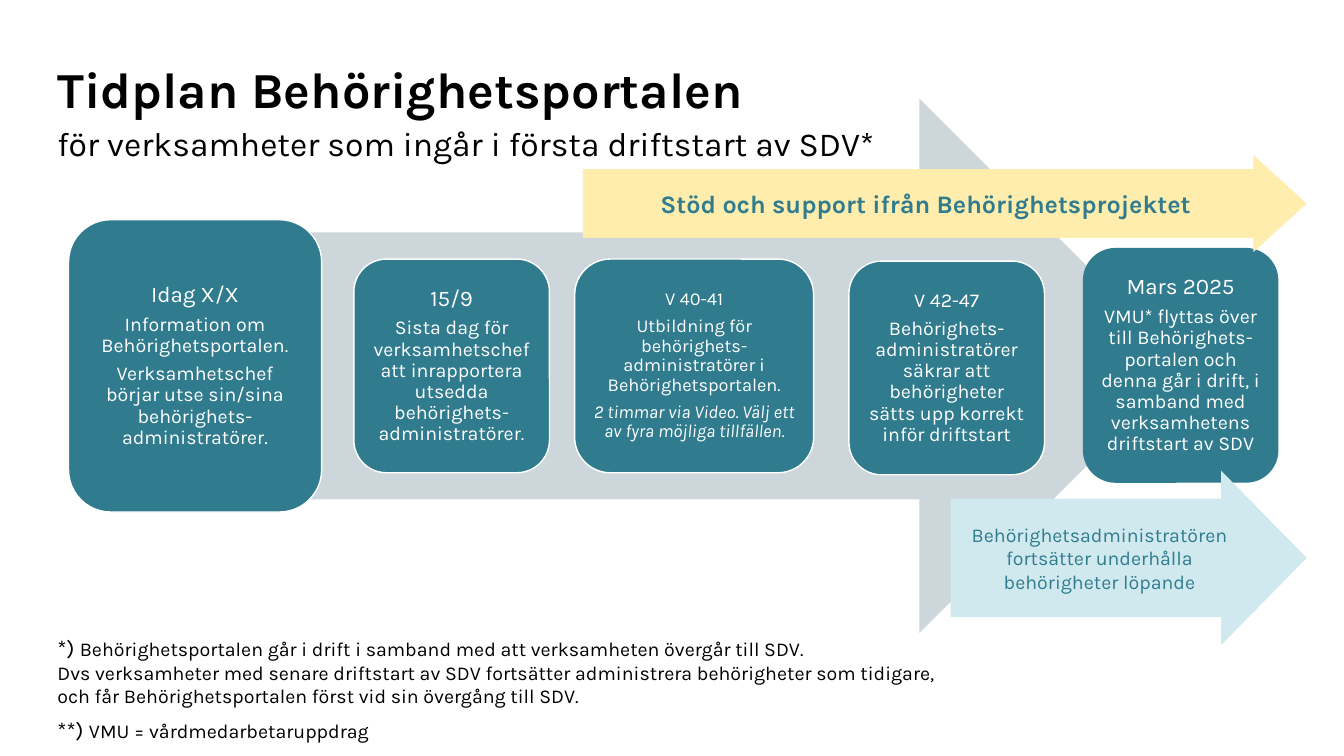
from pptx import Presentation
from pptx import util as u
from pptx.dml.color import RGBColor
from pptx.enum import shapes, text

COLORS = {
    "black": "000000",
    "white": "FFFFFF",
    "teal": "307C8E",
    "grey": "CDD7DB",
    "yellow": "FEEDAC",
    "ice": "CFE9EF",
}


class TimelineSlide:
    font_name = "Karla"

    def __init__(self, presentation):
        self.slide = presentation.slides.add_slide(presentation.slide_layouts[6])

    def color(self, name):
        return RGBColor.from_string(COLORS[name])

    def style(self, font, size, color, bold=False, italic=False):
        font.name = self.font_name
        font.size = u.Pt(size)
        font.color.rgb = self.color(color)
        font.bold = bold
        font.italic = italic

    def frame(self, shape, margin=None):
        frame = shape.text_frame
        frame.word_wrap = True
        if margin is not None:
            frame.margin_left = frame.margin_right = u.Inches(margin)
            frame.margin_top = frame.margin_bottom = u.Inches(margin)
        return frame

    def fill_text(self, frame, lines, color, align=text.PP_ALIGN.LEFT, spacing=None, after=0):
        for index, (words, size, *emphasis) in enumerate(lines):
            paragraph = frame.add_paragraph() if index else frame.paragraphs[0]
            paragraph.text = words
            paragraph.alignment = align
            paragraph.space_after = u.Pt(after)
            if spacing:
                paragraph.line_spacing = spacing
            self.style(paragraph.font, size, color, "bold" in emphasis, "italic" in emphasis)

    def text_box(self, left, top, width, height, lines, spacing=None):
        box = self.slide.shapes.add_textbox(*map(u.Inches, (left, top, width, height)))
        frame = self.frame(box)
        self.fill_text(frame, lines, "black", spacing=spacing)
        return frame

    def footnote(self, top, height, mark, words, *lines):
        frame = self.text_box(0.47, top, 11.62, height, [("", 14), *lines])
        for part, size in ((mark, 16), (words, 14)):
            run = frame.paragraphs[0].add_run()
            run.text = part
            run.font.size = u.Pt(size)

    def block(self, kind, left, top, width, height, fill, outline=None):
        shape = self.slide.shapes.add_shape(kind, *map(u.Inches, (left, top, width, height)))
        shape.shadow.inherit = False
        shape.fill.solid()
        shape.fill.fore_color.rgb = self.color(fill)
        if outline:
            shape.line.color.rgb = self.color(outline)
            shape.line.width = u.Pt(1)
        else:
            shape.line.fill.background()
        shape.text_frame.vertical_anchor = text.MSO_ANCHOR.MIDDLE
        return shape

    def arrow(self, left, top, width, height, fill, adjustments=(0.5, 0.5), lines=()):
        kind = shapes.MSO_SHAPE.RIGHT_ARROW
        shape = self.block(kind, left, top, width, height, fill)
        for index, value in enumerate(adjustments):
            shape.adjustments[index] = value
        self.fill_text(self.frame(shape), lines, "teal", text.PP_ALIGN.CENTER)

    def card(self, left, top, width, height, margin, lines, outline="white"):
        kind = shapes.MSO_SHAPE.ROUNDED_RECTANGLE
        shape = self.block(kind, left, top, width, height, "teal", outline)
        frame = self.frame(shape, margin)
        self.fill_text(frame, lines, "white", text.PP_ALIGN.CENTER, 0.9, 5)


def main():
    presentation = Presentation()
    presentation.slide_width = u.Inches(13.33)
    presentation.slide_height = u.Inches(7.5)
    timeline = TimelineSlide(presentation)

    timeline.text_box(0.47, 0.47, 12, 1.93, [
        ("Tidplan Behörighetsportalen", 36, "bold"),
        ("för verksamheter som ingår i första driftstart av SDV*", 24),
    ], spacing=1.1)

    timeline.arrow(1.57, 0.98, 10.2, 5.3, "grey")
    timeline.card(0.68, 2.18, 2.51, 2.9, 0.07, [
        ("Idag X/X", 16),
        ("Information om Behörighetsportalen.", 14),
        ("Verksamhetschef börjar utse sin/sina behörighets-administratörer.", 14),
    ])
    timeline.card(3.51, 2.57, 1.94, 2.12, 0.07, [
        ("15/9", 16),
        ("Sista dag för verksamhetschef att inrapportera utsedda "
         "behörighets-administratörer.", 14),
    ])
    timeline.card(5.7, 2.57, 2.37, 2.12, 0.05, [
        ("V 40-41", 13),
        ("Utbildning för behörighets-administratörer i Behörighetsportalen.", 13),
        ("2 timmar via Video. Välj ett av fyra möjliga tillfällen.", 13, "italic"),
    ])
    timeline.card(8.42, 2.59, 1.94, 2.12, 0.06, [
        ("V 42-47", 14),
        ("Behörighets-administratörer säkrar att behörigheter sätts upp korrekt "
         "inför driftstart", 14),
    ])
    timeline.card(10.74, 2.46, 1.94, 2.33, 0.07, [
        ("Mars 2025", 16),
        ("VMU* flyttas över till Behörighets-portalen och denna går i drift, "
         "i samband med verksamhetens driftstart av SDV", 14),
    ], outline=None)

    timeline.arrow(5.78, 1.54, 7.18, 0.96, "yellow", (0.71, 0.55), [
        ("Stöd och support ifrån Behörighetsprojektet", 18, "bold"),
    ])
    timeline.arrow(9.43, 4.67, 3.53, 1.73, "ice", (0.68, 0.49), [
        ("Behörighetsadministratören fortsätter underhålla behörigheter löpande", 14),
    ])

    timeline.footnote(
        6.24, 0.84, "*) ",
        "Behörighetsportalen går i drift i samband med att verksamheten övergår till SDV.",
        ("Dvs verksamheter med senare driftstart av SDV fortsätter administrera "
         "behörigheter som tidigare,\voch får Behörighetsportalen först vid sin "
         "övergång till SDV.", 14),
    )
    timeline.footnote(7.06, 0.37, "**) ", "VMU = vårdmedarbetaruppdrag")

    presentation.save("out.pptx")


if __name__ == "__main__":
    main()
